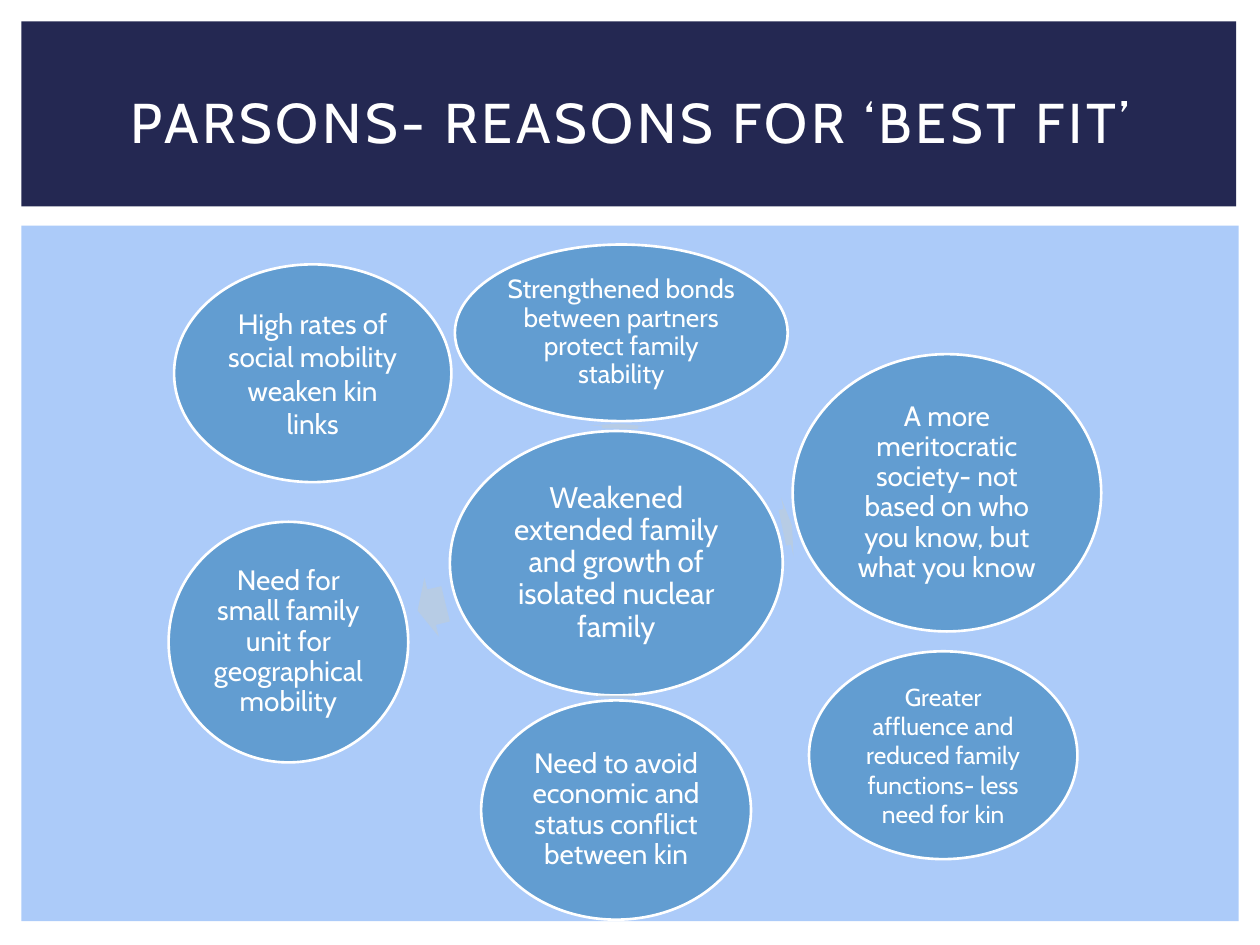
from dataclasses import dataclass
from typing import NamedTuple

from pptx import Presentation
from pptx.dml.color import RGBColor
from pptx.enum.shapes import MSO_SHAPE as Shape
from pptx.enum.text import MSO_ANCHOR as Anchor, PP_ALIGN as Align
from pptx.util import Cm, Pt


@dataclass(frozen=True)
class Theme:
    font: str = "Cabin"
    title_size: int = 32
    letter_spacing: int = 200  # hundredths of a point
    outline: float = 1.5
    text: str = "FFFFFF"
    banner: str = "242852"
    panel: str = "ACCBF9"
    bubble: str = "629DD1"
    arrow: str = "B7CCE5"


class Box(NamedTuple):
    """Left, top, width and height in centimetres."""
    left: float
    top: float
    width: float
    height: float

    def lengths(self) -> list:
        return [Cm(v) for v in self]


class Bubble(NamedTuple):
    box: Box
    text: str
    size: int
    in_diagram: bool = True


class Arrow(NamedTuple):
    box: Box
    rotation: float


THEME = Theme()
PANEL = Box(0.43, 4.55, 24.54, 14.02)
BANNER = Box(0.43, 0.43, 24.49, 3.73)
TITLE = Box(1.07, 0.99, 23.29, 2.92)
TIGHT = {"margin_left": Cm(0.05), "margin_right": Cm(0.05),
         "margin_top": Cm(0.05), "margin_bottom": Cm(0.05)}

CENTRE = Bubble(Box(9.07, 8.69, 6.71, 5.33),
                "Weakened extended family and growth of isolated nuclear family", 17)
REASONS = [
    Bubble(Box(9.17, 4.93, 6.71, 3.56),
           "Strengthened bonds between partners protect family stability", 15),
    Bubble(Box(15.98, 7.14, 6.22, 5.59),
           "A more meritocratic society- not based on who you know, but what you know", 16),
    Bubble(Box(9.7, 14.12, 5.44, 4.42),
           "Need to avoid economic and status conflict between kin", 16),
    Bubble(Box(3.4, 10.52, 4.83, 4.85),
           "Need for small family unit for geographical mobility", 16),
    Bubble(Box(16.31, 13.13, 5.41, 4.19),
           "Greater affluence and reduced family functions- less need for kin", 14, False),
    Bubble(Box(3.51, 5.33, 5.59, 4.39),
           "High rates of social mobility weaken kin links", 16, False),
]
ARROWS = [
    Arrow(Box(12.45, 7.98, 0.1, 1.22), 271.2),
    Arrow(Box(15.77, 10.01, 0.2, 1.22), 348.1),
    Arrow(Box(12.4, 13.44, 0.05, 1.22), 90),
    Arrow(Box(8.41, 11.63, 0.58, 1.22), 166.3),
]


def set_all(target, values: dict) -> None:
    for name, value in values.items():
        setattr(target, name, value)


def add_filled(s, kind: Shape, box: Box, color: str):
    """Add a flat preset shape without outline or shadow."""
    sp = s.shapes.add_shape(kind, *box.lengths())
    sp.shadow.inherit = False
    sp.fill.solid()
    sp.fill.fore_color.rgb = RGBColor.from_string(color)
    sp.line.fill.background()
    return sp


def write_text(sp, text: str, size: int):
    """Write one centred paragraph and return it."""
    tf = sp.text_frame
    set_all(tf, {"word_wrap": True, "vertical_anchor": Anchor.MIDDLE})
    p = tf.paragraphs[0]
    p.alignment = Align.CENTER
    r = p.add_run()
    r.text = text
    set_all(r.font, {"name": THEME.font, "size": Pt(size)})
    r.font.color.rgb = RGBColor.from_string(THEME.text)
    return p


def add_bubble(s, bubble: Bubble) -> None:
    sp = add_filled(s, Shape.OVAL, bubble.box, THEME.bubble)
    sp.line.color.rgb = RGBColor.from_string(THEME.text)
    sp.line.width = Pt(THEME.outline)
    p = write_text(sp, bubble.text, bubble.size)
    if bubble.in_diagram:
        set_all(sp.text_frame, TIGHT)
        p.line_spacing = 0.9


def add_arrow(s, arrow: Arrow) -> None:
    sp = add_filled(s, Shape.RIGHT_ARROW, arrow.box, THEME.arrow)
    sp.rotation = arrow.rotation
    sp.adjustments[0] = 0.6
    sp.adjustments[1] = 0.5


def add_title(s, text: str) -> None:
    sp = s.shapes.add_textbox(*TITLE.lengths())
    p = write_text(sp, text, THEME.title_size)
    p.runs[0].font._element.set("spc", str(THEME.letter_spacing))


def main() -> None:
    prs = Presentation()
    set_all(prs, {"slide_width": Cm(25.4), "slide_height": Cm(19.05)})
    s = prs.slides.add_slide(prs.slide_layouts[6])
    add_filled(s, Shape.RECTANGLE, PANEL, THEME.panel)
    add_filled(s, Shape.RECTANGLE, BANNER, THEME.banner)
    add_title(s, "PARSONS- REASONS FOR ‘BEST FIT’")
    add_bubble(s, CENTRE)
    for arrow in ARROWS:
        add_arrow(s, arrow)
    for reason in REASONS:
        add_bubble(s, reason)
    prs.save("out.pptx")


if __name__ == "__main__":
    main()
